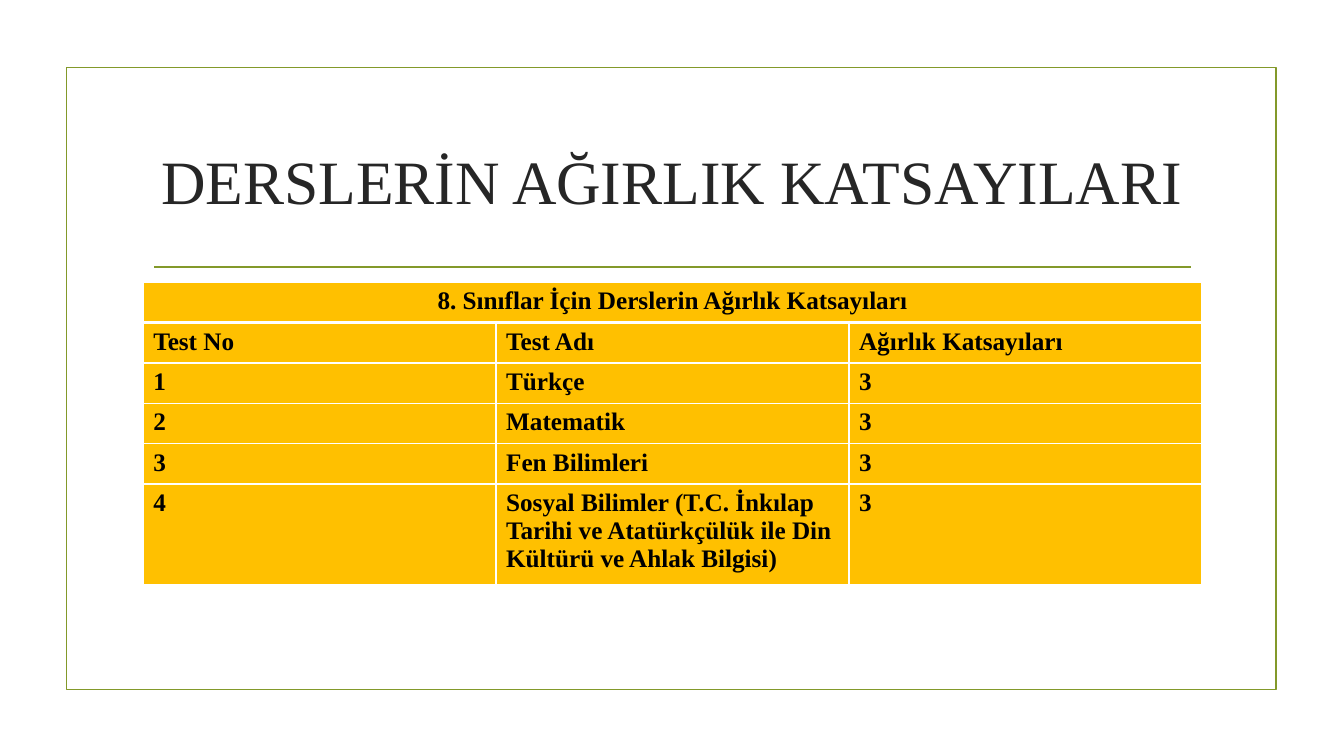
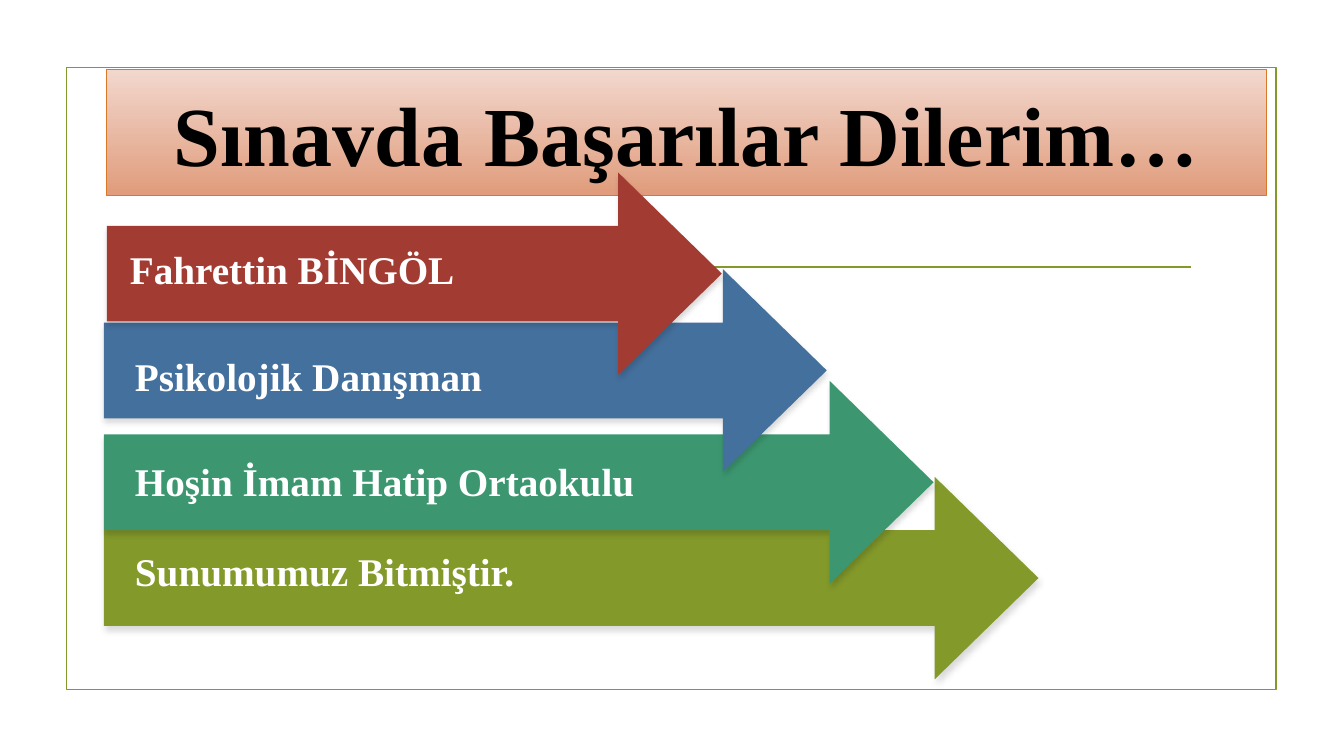
from typing import NamedTuple

from lxml.etree import SubElement
from pptx import Presentation
from pptx.dml.color import RGBColor
from pptx.enum.shapes import MSO_CONNECTOR, MSO_SHAPE
from pptx.enum.text import MSO_ANCHOR, PP_ALIGN
from pptx.oxml.ns import qn
from pptx.util import Emu, Pt

EMU_PER_PX = 9144  # 100 px to the inch
FONT = "Times New Roman"

WHITE = RGBColor(0xFF, 0xFF, 0xFF)
BLACK = RGBColor(0x00, 0x00, 0x00)
CHARCOAL = RGBColor(0x26, 0x26, 0x26)
OLIVE = RGBColor(0x83, 0x99, 0x2A)
GREEN = RGBColor(0x3C, 0x97, 0x70)
BLUE = RGBColor(0x44, 0x70, 0x9D)
RED = RGBColor(0xA2, 0x3C, 0x33)
AMBER = RGBColor(0xFF, 0xC0, 0x00)
ORANGE = RGBColor(0xD9, 0x78, 0x28)
BANNER_TOP = RGBColor(0xF2, 0xD7, 0xCD)
BANNER_BOTTOM = RGBColor(0xE0, 0x9C, 0x7C)


class Box(NamedTuple):
    left: int
    top: int
    width: int
    height: int

    def emu(self) -> list[Emu]:
        return [px(length) for length in self]


class Arrow(NamedTuple):
    box: Box
    color: RGBColor
    label: str
    label_box: Box


FRAME = Box(66, 67, 1200, 617)
TITLE = Box(142, 107, 1050, 143)
BANNER = Box(106, 69, 1150, 125)
TABLE = Box(142, 280, 1050, 240)
DIVIDER_LEFT, DIVIDER_RIGHT, DIVIDER_Y = 153, 1181, 265

ARROW_HEIGHT, SHAFT_HEIGHT, HEAD_LENGTH = 201, 95, 103
LABEL_HEIGHT = 57

ROWS = [
    ("8. Sınıflar İçin Derslerin Ağırlık Katsayıları", "", ""),
    ("Test No", "Test Adı", "Ağırlık Katsayıları"),
    ("1", "Türkçe", "3"),
    ("2", "Matematik", "3"),
    ("3", "Fen Bilimleri", "3"),
    ("4", "Sosyal Bilimler (T.C. İnkılap\nTarihi ve Atatürkçülük ile Din\n"
          "Kültürü ve Ahlak Bilgisi)", "3"),
]

# Back to front: each arrow overlaps the one below it.
ARROWS = [
    Arrow(Box(103, 473, 927, ARROW_HEIGHT), OLIVE,
          "Sunumumuz Bitmiştir.", Box(124, 538, 629, LABEL_HEIGHT)),
    Arrow(Box(103, 378, 823, ARROW_HEIGHT), GREEN,
          "Hoşin İmam Hatip Ortaokulu", Box(124, 449, 574, LABEL_HEIGHT)),
    Arrow(Box(103, 267, 717, ARROW_HEIGHT), BLUE,
          "Psikolojik Danışman", Box(124, 345, 424, LABEL_HEIGHT)),
    Arrow(Box(106, 171, 610, ARROW_HEIGHT), RED,
          "Fahrettin BİNGÖL", Box(119, 238, 441, LABEL_HEIGHT)),
]


def px(length: int) -> Emu:
    return Emu(length * EMU_PER_PX)


def write_text(frame, text: str, *, size: int, color: RGBColor, bold: bool = False,
               align=PP_ALIGN.LEFT, anchor=MSO_ANCHOR.TOP) -> None:
    """Fill a text frame, one paragraph for each line of text."""
    frame.word_wrap = True
    frame.vertical_anchor = anchor
    frame.text = text
    for paragraph in frame.paragraphs:
        paragraph.alignment = align
        font = paragraph.font
        font.name, font.size, font.bold = FONT, Pt(size), bold
        font.color.rgb = color


def add_flat_shape(slide, preset, box: Box):
    shape = slide.shapes.add_shape(preset, *box.emu())
    shape.shadow.inherit = False
    return shape


def add_framed_slide(deck):
    """Add a blank slide with the olive frame and divider."""
    slide = deck.slides.add_slide(deck.slide_layouts[6])
    frame = add_flat_shape(slide, MSO_SHAPE.RECTANGLE, FRAME)
    frame.fill.background()
    divider = slide.shapes.add_connector(
        MSO_CONNECTOR.STRAIGHT, px(DIVIDER_LEFT), px(DIVIDER_Y),
        px(DIVIDER_RIGHT), px(DIVIDER_Y))
    SubElement(divider._element.spPr, qn("a:effectLst"))
    for outline in (frame.line, divider.line):
        outline.color.rgb = OLIVE
        outline.width = Pt(1.25)
    return slide


def set_borders(cell, **widths: float) -> None:
    """Draw white borders; call before the fill, which must follow them in tcPr."""
    properties = cell._tc.get_or_add_tcPr()
    for side in "LRTB":
        line = SubElement(properties, qn(f"a:ln{side}"), w=str(Pt(widths.get(side, 1))))
        fill = SubElement(line, qn("a:solidFill"))
        SubElement(fill, qn("a:srgbClr"), val=str(WHITE))


def add_weights_table(slide) -> None:
    table = slide.shapes.add_table(len(ROWS), len(ROWS[0]), *TABLE.emu()).table
    table.cell(0, 0).merge(table.cell(0, len(ROWS[0]) - 1))
    for row_index, row in enumerate(ROWS):
        heading = row_index == 0
        # The heading and the row under it share one thick rule.
        thick = {0: {"B": 3}, 1: {"T": 3}}.get(row_index, {})
        for column_index, text in enumerate(row):
            cell = table.cell(row_index, column_index)
            set_borders(cell, **thick)
            cell.fill.solid()
            cell.fill.fore_color.rgb = AMBER
            if not cell.is_spanned:
                write_text(cell.text_frame, text, size=18, color=BLACK, bold=True,
                           align=PP_ALIGN.CENTER if heading else PP_ALIGN.LEFT)


def add_banner(slide, text: str) -> None:
    banner = add_flat_shape(slide, MSO_SHAPE.RECTANGLE, BANNER)
    banner.fill.gradient()
    banner.fill.gradient_angle = 270
    for stop, color in zip(banner.fill.gradient_stops, (BANNER_TOP, BANNER_BOTTOM)):
        stop.color.rgb = color
    banner.line.color.rgb = ORANGE
    banner.line.width = Pt(0.75)
    write_text(banner.text_frame, text, size=60, color=BLACK, bold=True,
               align=PP_ALIGN.CENTER, anchor=MSO_ANCHOR.MIDDLE)


def add_soft_shadow(shape) -> None:
    effects = shape._element.spPr.find(qn("a:effectLst"))
    shadow = SubElement(effects, qn("a:outerShdw"), blurRad=str(Pt(4)), dist=str(Pt(3)),
                        dir="5400000", rotWithShape="0")
    color = SubElement(shadow, qn("a:srgbClr"), val=str(BLACK))
    SubElement(color, qn("a:alpha"), val="15000")


def add_arrow(slide, arrow: Arrow) -> None:
    shape = add_flat_shape(slide, MSO_SHAPE.RIGHT_ARROW, arrow.box)
    shape.adjustments[0] = SHAFT_HEIGHT / ARROW_HEIGHT
    shape.adjustments[1] = HEAD_LENGTH / ARROW_HEIGHT
    shape.fill.solid()
    shape.fill.fore_color.rgb = arrow.color
    shape.line.fill.background()
    add_soft_shadow(shape)


def add_weights_slide(deck) -> None:
    slide = add_framed_slide(deck)
    title = slide.shapes.add_textbox(*TITLE.emu())
    write_text(title.text_frame, "DERSLERİN AĞIRLIK KATSAYILARI", size=44, color=CHARCOAL,
               align=PP_ALIGN.CENTER, anchor=MSO_ANCHOR.MIDDLE)
    add_weights_table(slide)


def add_closing_slide(deck) -> None:
    slide = add_framed_slide(deck)
    add_banner(slide, "Sınavda Başarılar Dilerim…")
    for arrow in ARROWS:
        add_arrow(slide, arrow)
    for arrow in ARROWS:
        label = slide.shapes.add_textbox(*arrow.label_box.emu())
        write_text(label.text_frame, arrow.label, size=28, color=WHITE, bold=True)


def main() -> None:
    deck = Presentation()
    deck.slide_width, deck.slide_height = px(1333), px(750)
    add_weights_slide(deck)
    add_closing_slide(deck)
    deck.save("out.pptx")


if __name__ == "__main__":
    main()
